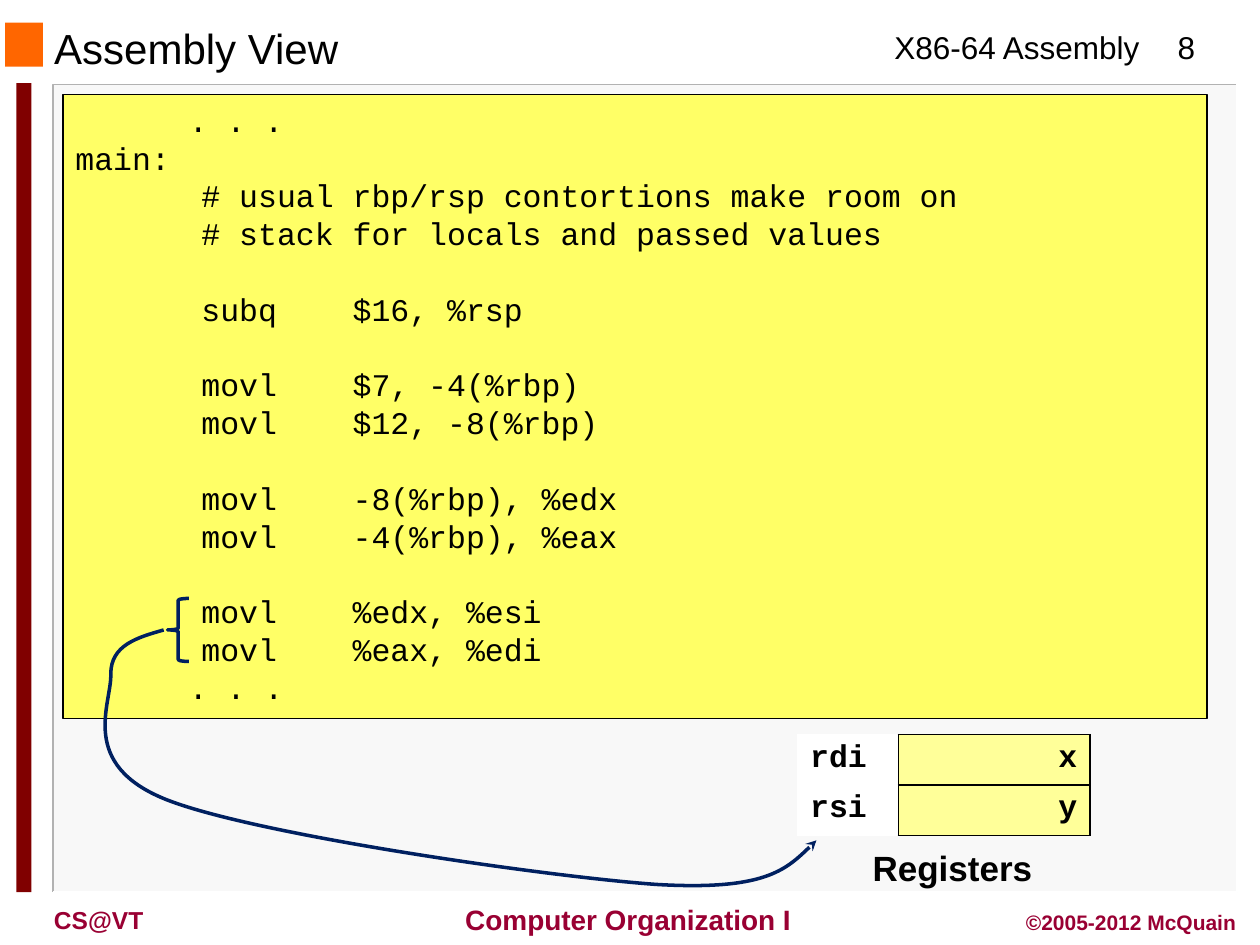
from dataclasses import dataclass

from lxml.etree import SubElement
from pptx import Presentation
from pptx.dml.color import RGBColor
from pptx.enum.shapes import MSO_SHAPE as Shape
from pptx.enum.text import MSO_ANCHOR as Anchor, PP_ALIGN as Align
from pptx.oxml.ns import qn
from pptx.util import Inches, Pt


@dataclass(frozen=True)
class Theme:
    sans: str = "Arial"
    mono: str = "Courier New"
    ink: str = "000000"
    white: str = "FFFFFF"
    panel: str = "F8F8F8"
    rule: str = "B2B2B2"
    accent: str = "FF6600"
    bar: str = "800000"
    footer: str = "990033"
    code: str = "FFFF66"
    register: str = "FFFF99"
    arrow: str = "002060"
    title_size: int = 24
    caption_size: int = 20
    body_size: int = 18
    course_size: int = 16
    school_size: int = 14
    credit_size: int = 12


THEME = Theme()
CODE_LINE_PITCH = Pt(21.6)
CODE_BLOCKS = [
    [". . .", "main:",
     "\t# usual rbp/rsp contortions make room on",
     "\t# stack for locals and passed values"],
    ["\tsubq\t$16, %rsp"],
    ["\tmovl\t$7, -4(%rbp)", "\tmovl\t$12, -8(%rbp)"],
    ["\tmovl\t-8(%rbp), %edx", "\tmovl\t-4(%rbp), %eax"],
    ["\tmovl\t%edx, %esi", "\tmovl\t%eax, %edi", ". . ."],
]
REGISTERS = [("rdi", "x"), ("rsi", "y")]
ARROW_POINTS = [
    (1.3, 5), (1.09, 5.06), (0.88, 5.12), (0.88, 5.35),
    (0.89, 5.58), (0.61, 6.07), (1.33, 6.35),
    (2.05, 6.63), (4.36, 6.96), (5.21, 7.02),
    (6.07, 7.07), (6.28, 6.87), (6.48, 6.67),
]


def rgb(color):
    return RGBColor.from_string(color)


def inches(box):
    return [Inches(value) for value in box]


def style_text(frame, size, color=THEME.ink, font=THEME.sans, bold=False, align=Align.LEFT):
    for para in frame.paragraphs:
        para.alignment = align
        for span in para.runs:
            span.font.name = font
            span.font.size = Pt(size)
            span.font.bold = bold
            span.font.color.rgb = rgb(color)


def style_line(shape, color, width):
    shape.line.color.rgb = rgb(color)
    shape.line.width = Pt(width)


def add_label(page, box, text, size, wrap=True, anchor=Anchor.TOP, **style):
    frame = page.shapes.add_textbox(*inches(box)).text_frame
    frame.word_wrap = wrap
    frame.vertical_anchor = anchor
    frame.text = text
    style_text(frame, size, **style)


def add_block(page, box, color):
    block = page.shapes.add_shape(Shape.RECTANGLE, *inches(box))
    block.shadow.inherit = False
    block.fill.solid()
    block.fill.fore_color.rgb = rgb(color)
    block.line.fill.background()
    return block


def add_open_path(page, points, color, width):
    start, *rest = [inches(point) for point in points]
    builder = page.shapes.build_freeform(*start)
    builder.add_line_segments(rest, close=False)
    path = builder.convert_to_shape()
    path.shadow.inherit = False
    path.fill.background()
    style_line(path, color, width)
    return path


def add_panel(page, box):
    """Pale panel with a grey top-left edge and a white bottom-right edge."""
    left, top, width, height = box
    right, bottom = left + width, top + height
    add_block(page, box, THEME.panel)
    for corner, color in (((left, top), THEME.rule), ((right, bottom), THEME.white)):
        add_open_path(page, [(right, top), corner, (left, bottom)], color, 1)


def add_title(page, box, text):
    title = page.shapes.title
    title.left, title.top, title.width, title.height = inches(box)
    title.text_frame.text = text
    title.text_frame.vertical_anchor = Anchor.MIDDLE
    style_text(title.text_frame, THEME.title_size)


def add_header(page, box):
    left, top, width, height = box
    add_block(page, (0.04, 0.18, 0.3, 0.35), THEME.accent)
    add_title(page, (left, 0.19, 6.33, 0.38), "Assembly View")
    add_label(page, (7, top, 2.17, height), "X86-64 Assembly", THEME.body_size, wrap=False)
    add_label(page, (left + width - 0.67, top, 0.67, height), "8", THEME.body_size,
              align=Align.CENTER)


def add_footer(page, box):
    left, top, width, height = box
    style = {"color": THEME.footer, "bold": True}
    add_label(page, (left, top + 0.02, 1.5, 0.33), "CS@VT", THEME.school_size, **style)
    add_label(page, (3.5, top, 2.91, height), " Computer Organization I", THEME.course_size,
              wrap=False, anchor=Anchor.MIDDLE, align=Align.CENTER, **style)
    add_label(page, (left + width - 2.08, top + 0.06, 2.08, 0.3), "©2005-2012 McQuain",
              THEME.credit_size, align=Align.RIGHT, **style)


def add_code(page, box):
    listing = add_block(page, box, THEME.code)
    style_line(listing, THEME.ink, 0.75)
    frame = listing.text_frame
    frame.word_wrap = True
    frame.vertical_anchor = Anchor.TOP
    frame.text = "\n".join(line for block in CODE_BLOCKS for line in block)
    style_text(frame, THEME.body_size, font=THEME.mono)

    paragraphs = iter(frame.paragraphs)
    for block_index, block in enumerate(CODE_BLOCKS):
        for line_index, line in enumerate(block):
            para = next(paragraphs)
            if block_index and not line_index:
                para.space_before = CODE_LINE_PITCH
            properties = para._p.get_or_add_pPr()
            if line.startswith("."):
                properties.set("marL", str(Inches(0.9)))
                properties.set("indent", "0")
            if line.startswith("\t"):
                stops = SubElement(properties, qn("a:tabLst"))
                for position in (1, 2.2):
                    SubElement(stops, qn("a:tab"), pos=str(Inches(position)), algn="l")


def add_brace(page, box):
    brace = page.shapes.add_shape(Shape.LEFT_BRACE, *inches(box))
    brace.shadow.inherit = False
    brace.fill.background()
    style_line(brace, THEME.arrow, 2)


def add_curved_arrow(page, points):
    """Turn each three segments of the control polygon into one Bézier curve."""
    arrow = add_open_path(page, points, THEME.arrow, 2)
    segments = list(arrow._element.iter(qn("a:lnTo")))
    for first in range(0, len(segments), 3):
        group = segments[first:first + 3]
        curve = SubElement(group[0].getparent(), qn("a:cubicBezTo"))
        for segment in group:
            curve.append(segment[0])
            segment.getparent().remove(segment)
    SubElement(arrow.line._get_or_add_ln(), qn("a:tailEnd"), type="stealth")


def add_border(cell, sides):
    properties = cell._tc.get_or_add_tcPr()
    for index, side in enumerate(sides):
        line = properties.makeelement(qn("a:ln" + side), {"w": str(Pt(1))})
        fill = SubElement(line, qn("a:solidFill"))
        SubElement(fill, qn("a:srgbClr"), val=THEME.ink)
        properties.insert(index, line)


def add_registers(page, box):
    left, top, width, height = box
    table = page.shapes.add_table(len(REGISTERS), 2, *inches(box)).table
    table.first_row = table.horz_banding = False
    table.columns[0].width = Inches(0.8)
    table.columns[1].width = Inches(width - 0.8)
    looks = [(THEME.white, Align.LEFT, "R"), (THEME.register, Align.RIGHT, "LRTB")]
    for row, values in enumerate(REGISTERS):
        table.rows[row].height = Inches(height / len(REGISTERS))
        for column, (value, (fill, align, sides)) in enumerate(zip(values, looks)):
            cell = table.cell(row, column)
            cell.text = value
            style_text(cell.text_frame, THEME.body_size, font=THEME.mono, bold=True, align=align)
            cell.fill.solid()
            cell.fill.fore_color.rgb = rgb(fill)
            add_border(cell, sides)
    add_label(page, (left + 0.25, top + height + 0.04, 1.96, 0.44), "Registers",
              THEME.caption_size, bold=True, align=Align.CENTER)


def main():
    deck = Presentation()
    deck.slide_width, deck.slide_height = Inches(10), Inches(7.5)
    page = deck.slides.add_slide(deck.slide_layouts[5])
    add_panel(page, (0.42, 0.67, 9.4, 6.41))
    add_block(page, (0.13, 0.66, 0.12, 6.42), THEME.bar)
    add_header(page, (0.33, 0.17, 9.42, 0.4))
    add_footer(page, (0.33, 7.11, 9.58, 0.37))
    add_code(page, (0.5, 0.75, 9.08, 4.95))
    add_brace(page, (1.33, 4.75, 0.17, 0.5))
    add_curved_arrow(page, ARROW_POINTS)
    add_registers(page, (6.33, 5.83, 2.32, 0.8))
    deck.save("out.pptx")


if __name__ == "__main__":
    main()
